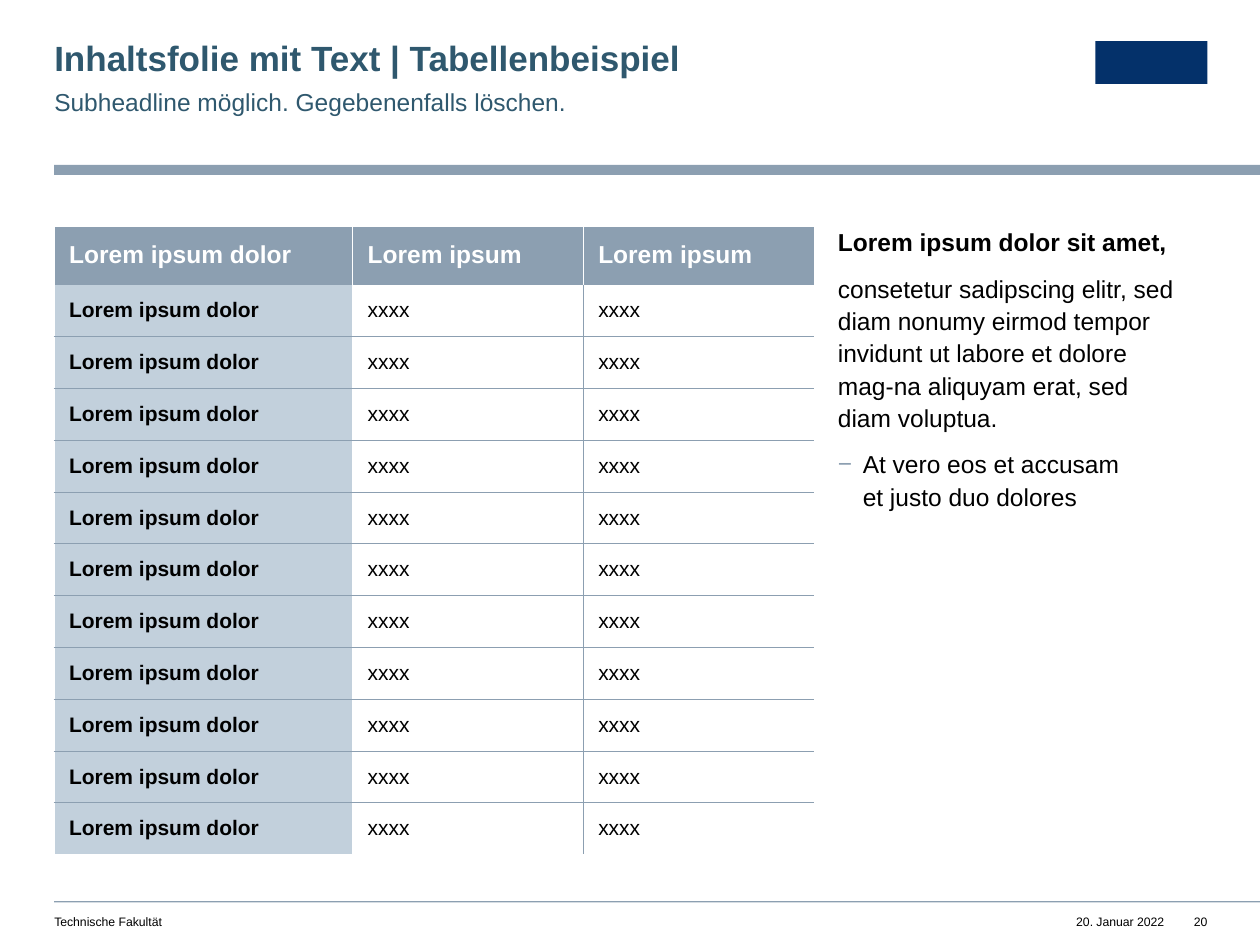
from copy import deepcopy
from typing import NamedTuple

from lxml import etree
from pptx import Presentation
from pptx.dml.color import RGBColor
from pptx.enum import shapes, text
from pptx.oxml.ns import qn
from pptx.util import Pt

STEEL, PALE, TEAL, NAVY = "8C9FB1", "C2D0DC", "2F586E", "04316A"
WHITE, BLACK = "FFFFFF", "000000"
SLIDE_W, SLIDE_H = 720, 540
LEFT, RIGHT = 31, 690
LEFT_ALIGN, RIGHT_ALIGN = text.PP_ALIGN.LEFT, text.PP_ALIGN.RIGHT


class Box(NamedTuple):
    x: float
    y: float
    w: float
    h: float


class Bar(NamedTuple):
    box: Box
    color: str


class Footer(NamedTuple):
    label: str
    box: Box
    align: text.PP_ALIGN


class Edge(NamedTuple):
    color: str
    width: float


BARS = [
    Bar(Box(LEFT, 94.3, SLIDE_W - LEFT, 5.6), STEEL),
    Bar(Box(LEFT, 515, SLIDE_W - LEFT, 0.75), STEEL),
    Bar(Box(626, 23.5, 64, 24.5), NAVY),
]
FOOTERS = [
    Footer("20. Januar 2022", Box(614, 522.7, 51.3, 8.6), RIGHT_ALIGN),
    Footer("Technische Fakultät", Box(LEFT, 522.7, 323, 8.6), LEFT_ALIGN),
    Footer("20", Box(675.4, 522.7, 14.6, 8.6), RIGHT_ALIGN),
]
HEADER = ["Lorem ipsum dolor", "Lorem ipsum", "Lorem ipsum"]
ROWS = [HEADER] + [["Lorem ipsum dolor", "xxxx", "xxxx"]] * 11
COL_WIDTHS = [170.6, 131.8, 131.8]
HEADER_H, ROW_H = 33.7, 29.6


def rgb(color: str) -> RGBColor:
    return RGBColor.from_string(color)


def place(sp, box: Box) -> None:
    sp.left, sp.top, sp.width, sp.height = map(Pt, box)


def set_frame(tf, right=0, wrap=True) -> None:
    """Top-anchored text without margins, apart from an optional right one."""
    tf.margin_left = tf.margin_top = tf.margin_bottom = 0
    tf.margin_right = Pt(right)
    tf.word_wrap = wrap
    tf.auto_size = text.MSO_AUTO_SIZE.NONE
    tf.vertical_anchor = text.MSO_ANCHOR.TOP


def write(p, content, size=14, color=BLACK, bold=False, align=LEFT_ALIGN,
          line=1.0, after=0) -> None:
    p.text = content
    p.alignment = align
    p.line_spacing = line
    p.space_before, p.space_after = Pt(0), Pt(after)
    for r in p.runs:
        r.font.name, r.font.size, r.font.bold = "Arial", Pt(size), bold
        r.font.color.rgb = rgb(color)
    for br in p._p.findall(qn("a:br")):
        br.insert(0, deepcopy(p.runs[0]._r.rPr))


def add_bullet(p, char: str, color: str, indent: float) -> None:
    pPr = p._p.get_or_add_pPr()
    pPr.set("marL", str(Pt(indent)))
    pPr.set("indent", str(-Pt(indent)))
    bu_clr = etree.SubElement(pPr, qn("a:buClr"))
    etree.SubElement(bu_clr, qn("a:srgbClr"), val=color)
    etree.SubElement(pPr, qn("a:buFont"), typeface="Arial")
    etree.SubElement(pPr, qn("a:buChar"), char=char)


def add_bar(slide, bar: Bar) -> None:
    sp = slide.shapes.add_shape(shapes.MSO_SHAPE.RECTANGLE, *map(Pt, bar.box))
    sp.shadow.inherit = False
    sp.fill.solid()
    sp.fill.fore_color.rgb = rgb(bar.color)
    sp.line.fill.background()


def add_footer(slide, footer: Footer) -> None:
    tf = slide.shapes.add_textbox(*map(Pt, footer.box)).text_frame
    set_frame(tf, wrap=footer.align == LEFT_ALIGN)
    write(tf.paragraphs[0], footer.label, size=7, align=footer.align)


def set_edge(cell, side: str, edge: Edge | None) -> None:
    ln = etree.SubElement(cell._tc.get_or_add_tcPr(), qn(f"a:ln{side}"))
    if edge is None:
        etree.SubElement(ln, qn("a:noFill"))
        return
    ln.set("w", str(Pt(edge.width)))
    fill = etree.SubElement(ln, qn("a:solidFill"))
    etree.SubElement(fill, qn("a:srgbClr"), val=edge.color)


def vertical_edge(row: int, line: int) -> Edge | None:
    """Edge on the grid line left of column number `line`."""
    if line == len(COL_WIDTHS):
        return None
    if line == 0:
        return Edge(WHITE, 1)
    if row == 0:
        return Edge(WHITE, 0.5)
    return Edge(WHITE, 1) if line == 1 else Edge(STEEL, 0.25)


def horizontal_edge(line: int) -> Edge | None:
    """Edge on the grid line above row number `line`."""
    if line == 0:
        return Edge(WHITE, 1)
    return Edge(STEEL, 0.25) if 1 < line < len(ROWS) else None


def format_cell(cell, content: str, row: int, col: int) -> None:
    cell.margin_left = cell.margin_right = Pt(8.5)
    cell.margin_top = cell.margin_bottom = Pt(2.8)
    cell.vertical_anchor = text.MSO_ANCHOR.MIDDLE
    set_edge(cell, "L", vertical_edge(row, col))
    set_edge(cell, "R", vertical_edge(row, col + 1))
    set_edge(cell, "T", horizontal_edge(row))
    set_edge(cell, "B", horizontal_edge(row + 1))
    head = row == 0
    if head or col == 0:
        cell.fill.solid()
        cell.fill.fore_color.rgb = rgb(STEEL if head else PALE)
    else:
        cell.fill.background()
    write(cell.text_frame.paragraphs[0], content, size=14 if head else 12,
          color=WHITE if head else BLACK, bold=head or col == 0)


def add_lorem_table(slide) -> None:
    heights = [HEADER_H] + [ROW_H] * (len(ROWS) - 1)
    box = Box(LEFT, 129, sum(COL_WIDTHS), sum(heights))
    table = slide.shapes.add_table(len(ROWS), len(COL_WIDTHS), *map(Pt, box)).table
    table.first_row = table.horz_banding = False
    for column, width in zip(table.columns, COL_WIDTHS):
        column.width = Pt(width)
    for i, (row, height) in enumerate(zip(table.rows, heights)):
        row.height = Pt(height)
        for j, cell in enumerate(row.cells):
            format_cell(cell, ROWS[i][j], i, j)


def fill_placeholders(slide) -> None:
    title, subheadline, spare, body, spare2 = slide.placeholders
    for sp in (spare, spare2):
        sp._element.getparent().remove(sp._element)

    place(title, Box(LEFT, 23.8, 404, 21.6))
    set_frame(title.text_frame)
    write(title.text_frame.paragraphs[0], "Inhaltsfolie mit Text | Tabellenbeispiel",
          size=20, color=TEAL, bold=True, line=0.9)

    place(subheadline, Box(LEFT, 48.2, 404, 17.3))
    set_frame(subheadline.text_frame, right=28)
    write(subheadline.text_frame.paragraphs[0],
          "Subheadline möglich. Gegebenenfalls löschen.", color=TEAL, line=1.1, after=8)

    place(body, Box(478.8, 128.2, 211.2, 360))
    tf = body.text_frame
    set_frame(tf, right=14.2)
    write(tf.paragraphs[0], "Lorem ipsum dolor sit amet,", bold=True, line=1.1, after=8)
    write(tf.add_paragraph(), "consetetur sadipscing elitr, sed diam nonumy eirmod tempor "
          "invidunt ut labore et dolore mag-na aliquyam erat, sed diam voluptua.",
          line=1.1, after=8)
    p = tf.add_paragraph()
    p.level = 1
    write(p, "At vero eos et accusam\net justo duo dolores", line=1.1, after=8)
    add_bullet(p, "−", STEEL, 14.2)


def main() -> None:
    prs = Presentation()
    prs.slide_width, prs.slide_height = Pt(SLIDE_W), Pt(SLIDE_H)
    slide = prs.slides.add_slide(prs.slide_layouts.get_by_name("Comparison"))
    fill_placeholders(slide)
    for bar in BARS:
        add_bar(slide, bar)
    for footer in FOOTERS:
        add_footer(slide, footer)
    add_lorem_table(slide)
    prs.save("out.pptx")


if __name__ == "__main__":
    main()
